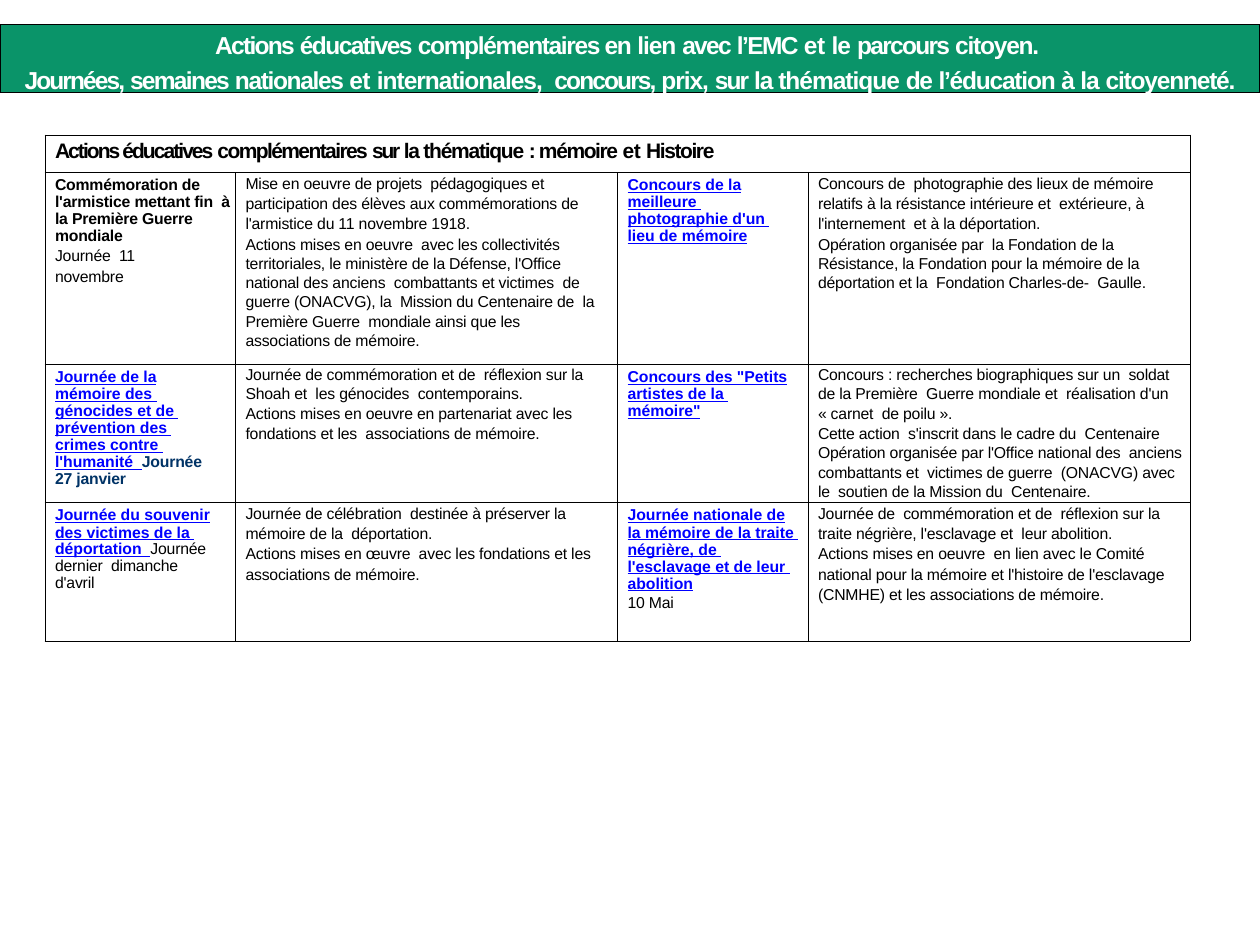
import pptx
import pptx.util
import pptx.dml.color
import pptx.enum.text
import pptx.oxml
from pptx.util import Cm, Pt


def colour(hex_string):
    return pptx.dml.color.RGBColor.from_string(hex_string)


def add_span(para, text, size, ink, bold=False, underline=False, spacing=0):
    """Add one run; spacing is the letter spacing in points."""
    span = para.add_run()
    span.text = text
    span.font.name = "Arial"
    span.font.size = Pt(size)
    span.font.bold = bold
    span.font.underline = underline
    span.font.color.rgb = colour(ink)
    span.font._element.set("spc", str(round(spacing * 100)))


# Ink, bold, underline, letter spacing
STYLES = {
    "plain": ("000000", False, False, -0.1),
    "strong": ("000000", True, False, -0.1),
    "link": ("0000FF", True, True, 0),
    "date": ("003366", True, False, -0.1),
}

BANNER = [
    [("Actions ", -1), ("éducatives ", -0.9), ("complémentaires en ", -0.8), ("lien ", -0.6),
     ("avec ", -1), ("l’EMC ", -0.9), ("et ", -0.3), ("le ", -0.5), ("parcours ", -1),
     ("citoyen. ", -0.7)],
    [("Journées, ", -1.1), ("semaines ", -1), ("nationales ", -0.8), ("et ", -0.3),
     ("internationales,  ", -0.6), ("concours, ", -1.1), ("prix, ", -0.6), ("sur ", -1.1),
     ("la thématique ", -0.6), ("de ", -0.8), ("l’éducation ", -0.7), ("à ", -0.8),
     ("la ", -0.6), ("citoyenneté.", -0.7)],
]

HEADING = [("Actions éducatives ", -1.1), ("complémentaires ", -0.9), ("sur ", -1.3),
           ("la thématique ", -0.7), (": mémoire ", -0.8), ("et ", -0.3), ("Histoire", -0.8)]

# Each cell is a list of paragraphs:
# line spacing (points, or a factor below 2), space before, right margin in cm, runs
ACTIONS = [
    [
        [(12.1, 0, 0, [("Commémoration de", "strong")]),
         (0.95, 0.3, 0, [("l'armistice mettant fin  à la Première Guerre  mondiale", "strong")]),
         (11.5, 0.3, 1, [("Journée  11 novembre", "plain")])],
        [(11.5, 0.1, 0, [("Mise en oeuvre de projets  pédagogiques et participation des élèves aux "
                          "commémorations de  l'armistice du 11 novembre 1918.", "plain")]),
         (11.5, 0.1, 0, [("Actions mises en oeuvre  avec les collectivités", "plain")]),
         (11, 0, 0.35, [("territoriales, le ministère de la Défense, l'Office  national des anciens  "
                         "combattants et victimes  de guerre (ONACVG), la  Mission du Centenaire de  "
                         "la Première Guerre  mondiale ainsi que les associations de mémoire.",
                         "plain")])],
        [(12.1, 0, 0, [("Concours de la", "link")]),
         (0.96, 0.3, 0.25, [("meilleure  photographie d'un  lieu de mémoire", "link")])],
        [(11.5, 0.1, 0, [("Concours de  photographie des lieux de mémoire relatifs à la résistance "
                          "intérieure et  extérieure, à l'internement  et à la déportation.",
                          "plain")]),
         (11.5, 0.1, 0, [("Opération organisée par  la Fondation de la", "plain")]),
         (11, 0, 0, [("Résistance, la Fondation pour la mémoire de la  déportation et la  "
                      "Fondation Charles-de-  Gaulle.", "plain")])],
    ],
    [
        [(12.3, 0, 0, [("Journée de la", "link")]),
         (0.96, 0.3, 0.25, [("mémoire des  génocides et de  prévention des  crimes contre  "
                             "l'humanité  ", "link"), ("Journée 27 janvier", "date")])],
        [(11.2, 0, 0, [("Journée de commémoration et de  réflexion sur la Shoah et  "
                        "les génocides  contemporains.", "plain")]),
         (11.2, 0, 0, [("Actions mises en oeuvre en partenariat avec les  fondations et les  "
                        "associations de mémoire.", "plain")])],
        [(12.3, 0, 0, [("Concours des \"Petits", "link")]),
         (0.96, 0.3, 0.25, [("artistes de la  mémoire\"", "link")])],
        [(11.2, 0, 0.1, [("Concours : recherches biographiques sur un  soldat de la Première  Guerre "
                          "mondiale et  réalisation d'un « carnet  de poilu ».", "plain")]),
         (11.2, 0, 0, [("Cette action  s'inscrit dans le cadre du  Centenaire", "plain")]),
         (11.2, 0, 0, [("Opération organisée par l'Office national des  anciens combattants et  "
                        "victimes de guerre  (ONACVG) avec le  soutien de la Mission du  "
                        "Centenaire.", "plain")])],
    ],
    [
        [(12.3, 0, 0, [("Journée du souvenir", "link")]),
         (0.95, 0.3, 0.25, [("des victimes de la  déportation  ", "link"),
                            ("Journée dernier  dimanche d'avril", "plain")])],
        [(11.5, 0.2, 0, [("Journée de célébration  destinée à préserver la  mémoire de la  "
                          "déportation.", "plain")]),
         (11.5, 0.2, 0, [("Actions mises en œuvre  avec les fondations et les  "
                          "associations de mémoire.", "plain")])],
        [(12.3, 0, 0, [("Journée nationale de", "link")]),
         (0.96, 0.3, 0, [("la mémoire de la traite  négrière, de  l'esclavage et de leur  "
                          "abolition", "link")]),
         (11.1, 0, 0, [("10 Mai", "plain")])],
        [(11.5, 0.2, 0.5, [("Journée de  commémoration et de  réflexion sur la traite négrière, "
                            "l'esclavage et  leur abolition.", "plain")]),
         (11.5, 0.2, 0, [("Actions mises en oeuvre  en lien avec le Comité  national pour la mémoire "
                          "et l'histoire de l'esclavage  (CNMHE) et les associations de mémoire.",
                          "plain")])],
    ],
]

deck = pptx.Presentation()
deck.slide_width, deck.slide_height = Cm(25.4), Cm(19.05)
page = deck.slides.add_slide(deck.slide_layouts[5])

# Title banner
banner = page.shapes.title
banner.left, banner.top, banner.width, banner.height = Cm(0), Cm(0.5), Cm(25.4), Cm(1.37)
banner.fill.solid()
banner.fill.fore_color.rgb = colour("0A9469")
banner.line.color.rgb = colour("000000")
banner.line.width = Pt(0.75)
frame = banner.text_frame
frame.word_wrap = True
frame.auto_size = pptx.enum.text.MSO_AUTO_SIZE.NONE
frame.vertical_anchor = pptx.enum.text.MSO_ANCHOR.TOP
frame.margin_left = frame.margin_right = frame.margin_top = frame.margin_bottom = 0
for index, spans in enumerate(BANNER):
    para = frame.add_paragraph() if index else frame.paragraphs[0]
    para.alignment = pptx.enum.text.PP_ALIGN.CENTER
    para.line_spacing = 1.18
    para.space_before = Pt(0.3)
    for text, spacing in spans:
        add_span(para, text, 14, "FFFFFF", bold=True, spacing=spacing)

# Table grid
widths = [3.84, 7.7, 3.84, 7.7]
heights = [0.76, 3.86, 2.79, 2.79]
table = page.shapes.add_table(len(heights), len(widths), Cm(0.91), Cm(2.72),
                              Cm(sum(widths)), Cm(sum(heights))).table
table.first_row = table.horz_banding = False
for column, width in zip(table.columns, widths):
    column.width = Cm(width)
for row, height in zip(table.rows, heights):
    row.height = Cm(height)
for cell in table.iter_cells():
    cell.margin_left, cell.margin_right = Cm(0.2), Cm(0.1)
    cell.margin_top = cell.margin_bottom = 0
    cell.fill.background()
    properties = cell._tc.get_or_add_tcPr()
    for index, side in enumerate("LRTB"):
        properties.insert(index, pptx.oxml.parse_xml(
            f'<a:ln{side} xmlns:a="http://schemas.openxmlformats.org/drawingml/2006/main" w="6350">'
            f'<a:solidFill><a:srgbClr val="000000"/></a:solidFill></a:ln{side}>'))

# Heading row
heading = table.cell(0, 0)
heading.merge(table.cell(0, 3))
heading.margin_top = Cm(0.1)
para = heading.text_frame.paragraphs[0]
para.space_before = Pt(3.5)
for text, spacing in HEADING:
    add_span(para, text, 12, "000000", bold=True, spacing=spacing)

# Action rows
for row_index, action_row in enumerate(ACTIONS, start=1):
    for column_index, paragraphs in enumerate(action_row):
        frame = table.cell(row_index, column_index).text_frame
        for index, (leading, before, right_margin, spans) in enumerate(paragraphs):
            para = frame.add_paragraph() if index else frame.paragraphs[0]
            para.line_spacing = leading if leading < 2 else Pt(leading)
            para.space_before = Pt(before)
            para._p.get_or_add_pPr().set("marR", str(Cm(right_margin)))
            for text, style in spans:
                add_span(para, text, 9, *STYLES[style])

deck.save("out.pptx")
